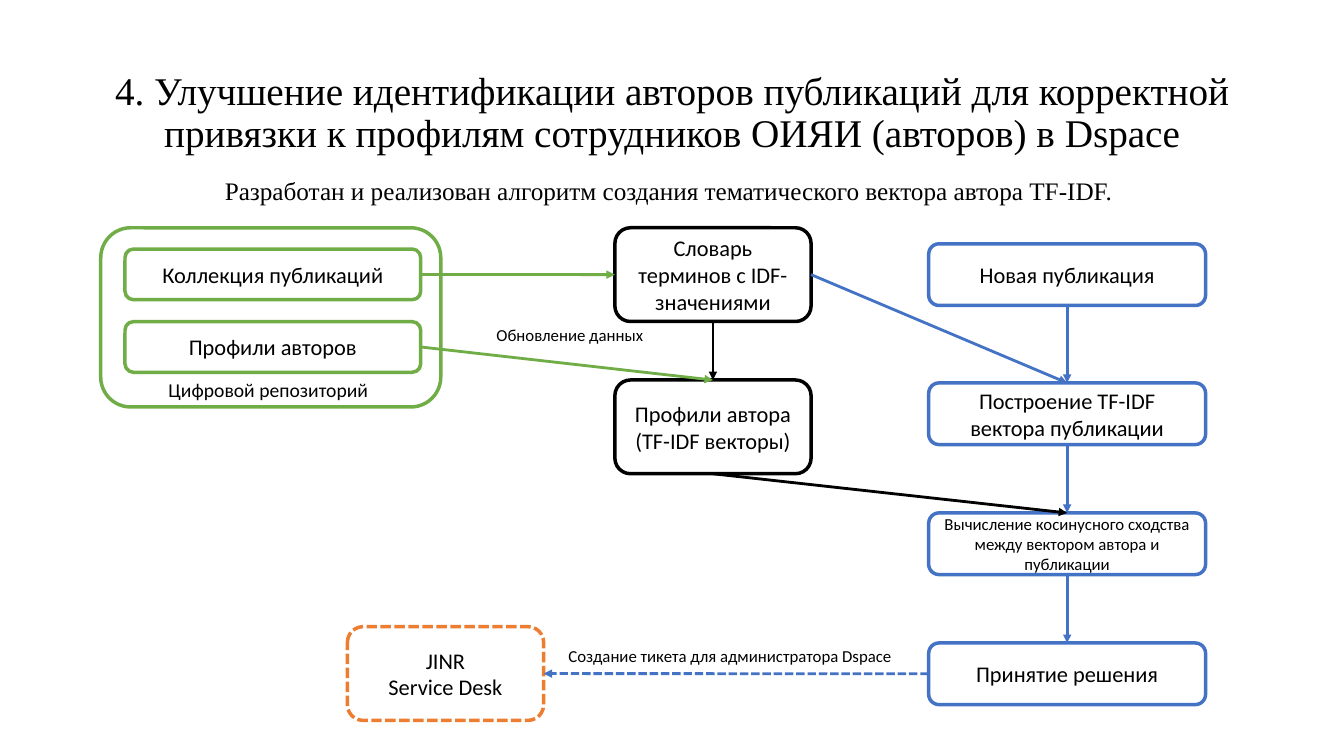
"""Build the slide on matching publications to author profiles with TF-IDF vectors."""
import pptx
import pptx.dml.color
import pptx.enum.dml
import pptx.enum.shapes
import pptx.enum.text
import pptx.oxml.ns
import pptx.util
import lxml.etree

COLORS = {"black": "000000", "white": "FFFFFF", "green": "70AD47",
          "blue": "4472C4", "orange": "ED7D31"}
DASH = pptx.enum.dml.MSO_LINE.SQUARE_DOT
CENTER = pptx.enum.text.PP_ALIGN.CENTER
MIDDLE = pptx.enum.text.MSO_ANCHOR.MIDDLE
TOP = pptx.enum.text.MSO_ANCHOR.TOP
qn = pptx.oxml.ns.qn

prs = pptx.Presentation()
prs.slide_width = pptx.util.Inches(13.33)
prs.slide_height = pptx.util.Inches(7.5)
col, row = prs.slide_width / 100, prs.slide_height / 100
s = prs.slides.add_slide(prs.slide_layouts[1])


def place(x, y, w, h):
    """Turn percentages of the slide into left, top, width and height."""
    return int(x * col), int(y * row), int(w * col), int(h * row)


def write(sp, text, size, name="Calibri", align=CENTER, anchor=MIDDLE, spacing=1.0):
    """Fill a shape with paragraphs of one format."""
    tf = sp.text_frame
    tf.text = text
    frame = {"word_wrap": True, "vertical_anchor": anchor,
             "auto_size": pptx.enum.text.MSO_AUTO_SIZE.NONE}
    for key, value in frame.items():
        setattr(tf, key, value)
    for p in tf.paragraphs:
        for key, value in {"alignment": align, "line_spacing": spacing,
                           "space_before": pptx.util.Pt(0)}.items():
            setattr(p, key, value)
        for r in p.runs:
            for key, value in {"name": name, "size": pptx.util.Pt(size)}.items():
                setattr(r.font, key, value)
            r.font.color.rgb = pptx.dml.color.RGBColor.from_string(COLORS["black"])


headings = [
    (s.shapes.title, 5.35, 19.35, 28, MIDDLE,
     "4. Улучшение идентификации авторов публикаций для корректной "
     "привязки к профилям сотрудников ОИЯИ (авторов) в Dspace"),
    (s.placeholders[1], 22.95, 5.5, 18, TOP,
     "Разработан и реализован алгоритм создания тематического вектора автора TF-IDF. "),
]
for sp, y, h, size, anchor, text in headings:
    sp.left, sp.top, sp.width, sp.height = place(6.9, y, 86.2, h)
    write(sp, text, size, "Times New Roman", anchor=anchor, spacing=0.9)
pPr = s.placeholders[1].text_frame.paragraphs[0]._p.get_or_add_pPr()
pPr.set("marL", "0")
pPr.set("indent", "0")
lxml.etree.SubElement(pPr, qn("a:buNone"))

core, store, step = (14.6, 12.4), (22, 6.7), (20.6, 8.15)
core_x, store_x, step_x = 45.75, 9.3, 69.1
boxes = {
    "repository": (7.5, 30.13, (25.3, 23.7), "green", 14, ""),
    "dictionary": (core_x, 30.13, core, "black", 16, "Словарь терминов с IDF-значениями"),
    "vectors": (core_x, 50.27, core, "black", 16, "Профили автора\n(TF-IDF векторы)"),
    "collection": (store_x, 32.95, store, "green", 16, "Коллекция публикаций"),
    "profiles": (store_x, 42.55, store, "green", 16, "Профили авторов"),
    "publication": (step_x, 32.25, step, "blue", 16, "Новая публикация"),
    "build": (step_x, 50.65, step, "blue", 16, "Построение TF-IDF вектора публикации"),
    "cosine": (step_x, 67.85, step, "blue", 12,
               "Вычисление косинусного сходства между вектором автора и публикации"),
    "decision": (step_x, 85.05, step, "blue", 16, "Принятие решения"),
    "desk": (25.85, 82.9, core, "orange", 16, "JINR\nService Desk"),
}
shapes = {}
for key, (x, y, (w, h), color, size, text) in boxes.items():
    sp = s.shapes.add_shape(pptx.enum.shapes.MSO_SHAPE.ROUNDED_RECTANGLE, *place(x, y, w, h))
    sp.shadow.inherit = False
    sp.fill.solid()
    sp.fill.fore_color.rgb = pptx.dml.color.RGBColor.from_string(COLORS["white"])
    sp.line.color.rgb = pptx.dml.color.RGBColor.from_string(COLORS[color])
    sp.line.width = pptx.util.Pt(2.5)
    if key == "desk":
        sp.line.dash_style = DASH
    write(sp, text, size)
    shapes[key] = sp

top, left, bottom, right = range(4)
arrows = [
    ("dictionary", bottom, "vectors", top, "black"),
    ("profiles", right, "vectors", top, "green"),
    ("dictionary", right, "build", top, "blue"),
    ("publication", bottom, "build", top, "blue"),
    ("collection", right, "dictionary", left, "green"),
    ("build", bottom, "cosine", top, "blue"),
    ("vectors", bottom, "cosine", top, "black"),
    ("cosine", bottom, "decision", top, "blue"),
    ("decision", left, "desk", right, "blue"),
]
for start, start_side, end, end_side, color in arrows:
    arrow = s.shapes.add_connector(pptx.enum.shapes.MSO_CONNECTOR.STRAIGHT, 0, 0, 0, 0)
    arrow.begin_connect(shapes[start], start_side)
    arrow.end_connect(shapes[end], end_side)
    arrow.line.color.rgb = pptx.dml.color.RGBColor.from_string(COLORS[color])
    arrow.line.width = pptx.util.Pt(2)
    if end == "desk":
        arrow.line.dash_style = DASH
    lxml.etree.SubElement(arrow.line._get_or_add_ln(), qn("a:tailEnd"), type="triangle")
    lxml.etree.SubElement(arrow._element.spPr, qn("a:effectLst"))

labels = [
    (36.2, 42.3, 12.6, 4, 12, "Обновление данных"),
    (11.8, 49.35, 18, 4.5, 14, "Цифровой репозиторий"),
    (41.55, 84.8, 26.4, 4, 12, "Создание тикета для администратора Dspace"),
]
for x, y, w, h, size, text in labels:
    sp = s.shapes.add_textbox(*place(x, y, w, h))
    write(sp, text, size, align=pptx.enum.text.PP_ALIGN.LEFT, anchor=TOP)

prs.save("out.pptx")
